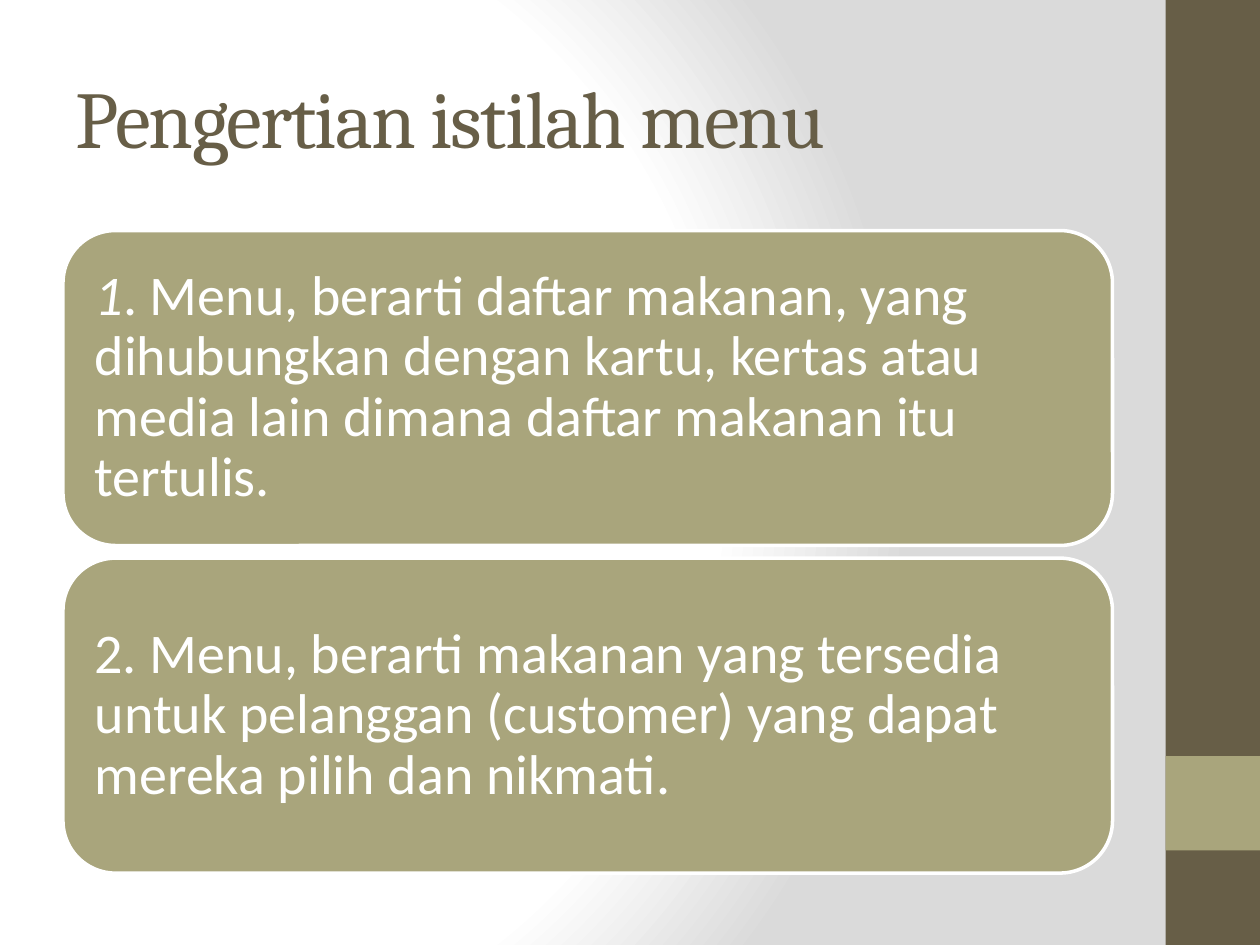
import pptx
import pptx.dml.color
import pptx.enum.shapes
import pptx.enum.text
import pptx.oxml
import pptx.oxml.ns
import pptx.util
from pptx.util import Inches

BROWN, OLIVE, WHITE = "675E47", "A9A57C", "FFFFFF"


def color(hex_code):
    return pptx.dml.color.RGBColor.from_string(hex_code)


def add_filled_shape(kind, left, top, width, height, fill):
    shape = slide.shapes.add_shape(
        kind, Inches(left), Inches(top), Inches(width), Inches(height))
    shape.shadow.inherit = False
    shape.fill.solid()
    shape.fill.fore_color.rgb = color(fill)
    shape.line.fill.background()
    return shape


presentation = pptx.Presentation()
presentation.slide_width = Inches(10)
presentation.slide_height = Inches(7.5)
slide = presentation.slides.add_slide(presentation.slide_layouts[5])

# Background: circular gradient from white to grey
slide.background.fill.gradient()
linear_gradient = slide.element.find(".//" + pptx.oxml.ns.qn("a:gradFill"))
stops = "".join(
    f'<a:gs pos="{position * 1000}"><a:srgbClr val="{code}"/></a:gs>'
    for position, code in [(0, WHITE), (75, WHITE), (100, "DADADA")])
circular_gradient = pptx.oxml.parse_xml(
    f'<a:gradFill {pptx.oxml.ns.nsdecls("a")} rotWithShape="1">'
    f'<a:gsLst>{stops}</a:gsLst><a:path path="circle">'
    '<a:fillToRect l="20000" t="50000" r="100000" b="50000"/>'
    '</a:path></a:gradFill>')
linear_gradient.getparent().replace(linear_gradient, circular_gradient)

# Side band with its accent square
rectangle = pptx.enum.shapes.MSO_SHAPE.RECTANGLE
add_filled_shape(rectangle, 9.25, 0, 0.75, 7.5, BROWN)
add_filled_shape(rectangle, 9.25, 6, 0.75, 0.75, OLIVE)

# Title
title = slide.shapes.title
title.left, title.top = Inches(0.5), Inches(0.3)
title.width, title.height = Inches(8.33), Inches(1.25)
title.text_frame.text = "Pengertian istilah menu"
title.text_frame.vertical_anchor = pptx.enum.text.MSO_ANCHOR.MIDDLE
paragraph = title.text_frame.paragraphs[0]
paragraph.alignment = pptx.enum.text.PP_ALIGN.LEFT
paragraph.font.name = "Cambria"
paragraph.font.size = pptx.util.Pt(46)
paragraph.font.color.rgb = color(BROWN)
paragraph.runs[0].font._element.set("spc", "-100")

# Definition cards: (italic number, rest of the text)
definitions = [
    ("1", ". Menu, berarti daftar makanan, yang dihubungkan dengan kartu, "
          "kertas atau media lain dimana daftar makanan itu tertulis."),
    ("", "2. Menu, berarti makanan yang tersedia untuk pelanggan (customer) "
         "yang dapat mereka pilih dan nikmati."),
]
for index, (italic_text, plain_text) in enumerate(definitions):
    card = add_filled_shape(pptx.enum.shapes.MSO_SHAPE.ROUNDED_RECTANGLE,
                            0.5, 1.83 + index * 2.6, 8.33, 2.5, OLIVE)
    card.line.color.rgb = color(WHITE)
    card.line.width = pptx.util.Pt(2)
    frame = card.text_frame
    frame.word_wrap = True
    frame.vertical_anchor = pptx.enum.text.MSO_ANCHOR.MIDDLE
    frame.margin_left = frame.margin_right = Inches(0.13)
    frame.margin_top = frame.margin_bottom = Inches(0.13)
    paragraph = frame.paragraphs[0]
    paragraph.alignment = pptx.enum.text.PP_ALIGN.LEFT
    paragraph.line_spacing = 0.9
    paragraph.font.name = "Calibri"
    paragraph.font.size = pptx.util.Pt(32)
    paragraph.font.color.rgb = color(WHITE)
    if italic_text:
        run = paragraph.add_run()
        run.text = italic_text
        run.font.italic = True
    paragraph.add_run().text = plain_text

presentation.save("out.pptx")
